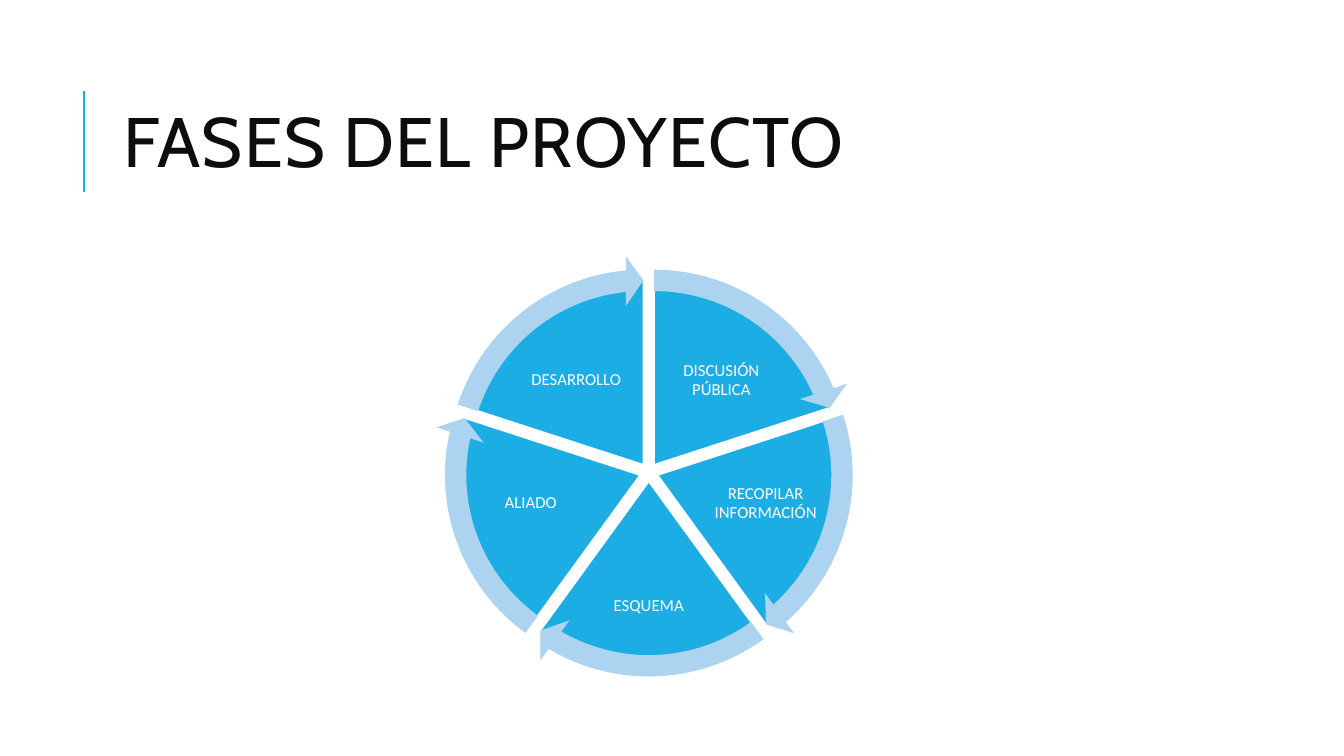
from math import cos, radians, sin

from lxml.etree import SubElement
from pptx import Presentation
from pptx.dml.color import RGBColor
from pptx.enum.shapes import MSO_CONNECTOR as CONNECTOR, MSO_SHAPE as SHAPE
from pptx.enum.text import MSO_ANCHOR as ANCHOR, MSO_AUTO_SIZE as AUTO_SIZE, PP_ALIGN as ALIGN
from pptx.oxml.ns import qn
from pptx.util import Inches, Pt

BLUE, PALE_BLUE, WHITE, INK = "1CADE4", "ACD3EF", "FFFFFF", "0D0D0D"
ANGLE_UNIT = 60000 / 100000
PHASES = [
    ("DISCUSIÓN PÚBLICA", 0.72, -0.91, 1.19, 0.79),
    ("RECOPILAR INFORMACIÓN", 1.16, 0.31, 1.1, 0.88),
    ("ESQUEMA", 0, 1.33, 1.06, 0.97),
    ("ALIADO", -1.17, 0.31, 1.1, 0.88),
    ("DESARROLLO", -0.72, -0.91, 1.19, 0.79),
]


def color(value):
    """Turn a hex string into a colour."""
    return RGBColor.from_string(value)


def write(frame, text, *, size, font, ink, align, line_spacing, inset=None, tracking=None):
    """Put one formatted paragraph, vertically centred, in a text frame."""
    frame.word_wrap = True
    frame.auto_size = AUTO_SIZE.NONE
    frame.vertical_anchor = ANCHOR.MIDDLE
    if inset is not None:
        frame.margin_left = frame.margin_right = Inches(inset)
        frame.margin_top = frame.margin_bottom = Inches(inset)
    paragraph = frame.paragraphs[0]
    paragraph.alignment = align
    paragraph.line_spacing = line_spacing
    run = paragraph.add_run()
    run.text = text
    run.font.size = Pt(size)
    run.font.name = font
    run.font.color.rgb = color(ink)
    if tracking:
        run.font._element.set("spc", str(tracking))


def add_disc_part(parent, kind, center_x, center_y, diameter, fill, adjustments, outline=None):
    """Add a circular preset centred on a point."""
    part = parent.shapes.add_shape(
        kind, Inches(center_x - diameter / 2), Inches(center_y - diameter / 2),
        Inches(diameter), Inches(diameter))
    part.shadow.inherit = False
    part.fill.solid()
    part.fill.fore_color.rgb = color(fill)
    if outline:
        part.line.color.rgb = color(outline)
        part.line.width = Pt(1.25)
    else:
        part.line.fill.background()
    for index, value in enumerate(adjustments):
        part.adjustments[index] = value


def add_heading(slide, left, top, width, height):
    """Place the title and the accent rule to its left."""
    rule_x = Inches(left - 0.29)
    accent = slide.shapes.add_connector(
        CONNECTOR.STRAIGHT, rule_x, Inches(top + 1.26), rule_x, Inches(top + 0.26))
    accent.line.color.rgb = color(BLUE)
    accent.line.width = Pt(1.5)
    SubElement(accent._element.spPr, qn("a:effectLst"))
    title = slide.shapes.title
    title.left, title.top = Inches(left), Inches(top)
    title.width, title.height = Inches(width), Inches(height)
    write(title.text_frame, "FASES DEL PROYECTO", size=50, font="Cabin", ink=INK,
          align=ALIGN.LEFT, line_spacing=0.8, tracking=100)


def add_phase_cycle(slide, left, top, diameter):
    """Draw the wedges, their labels and the arrows around them in a square box."""
    cycle = slide.shapes.add_group_shape()
    hub_x, hub_y = left + diameter / 2, top + diameter / 2
    sweep, gap, head_angle = 360 / len(PHASES), 0.09, 5.46
    arrows = []
    for index, (phase, dx, dy, width, height) in enumerate(PHASES):
        start = (270 + index * sweep) % 360
        end = (start + sweep) % 360
        middle = radians(start + sweep / 2)
        center = hub_x + gap * cos(middle), hub_y + gap * sin(middle)
        add_disc_part(cycle, SHAPE.PIE, *center, diameter - 0.45, BLUE,
                      (start * ANGLE_UNIT, end * ANGLE_UNIT), WHITE)
        label = cycle.shapes.add_textbox(
            Inches(hub_x + dx - width / 2), Inches(hub_y + dy - height / 2),
            Inches(width), Inches(height))
        write(label.text_frame, phase, size=12, font="Calibri", ink=WHITE,
              align=ALIGN.CENTER, line_spacing=0.9, inset=0.02)
        arrows.append((center, (0.051, head_angle * ANGLE_UNIT, (end - head_angle) * ANGLE_UNIT,
                                start * ANGLE_UNIT, 0.059)))
    for center, adjustments in arrows:
        add_disc_part(cycle, SHAPE.CIRCULAR_ARROW, *center, diameter, PALE_BLUE, adjustments)


def main():
    """Build and save the slide."""
    deck = Presentation()
    deck.slide_width, deck.slide_height = Inches(13.33), Inches(7.5)
    slide = deck.slides.add_slide(deck.slide_layouts[5])
    add_heading(slide, 1.12, 0.64, 10.63, 1.64)
    add_phase_cycle(slide, 4.36, 2.61, 4.15)
    deck.save("out.pptx")


if __name__ == "__main__":
    main()
